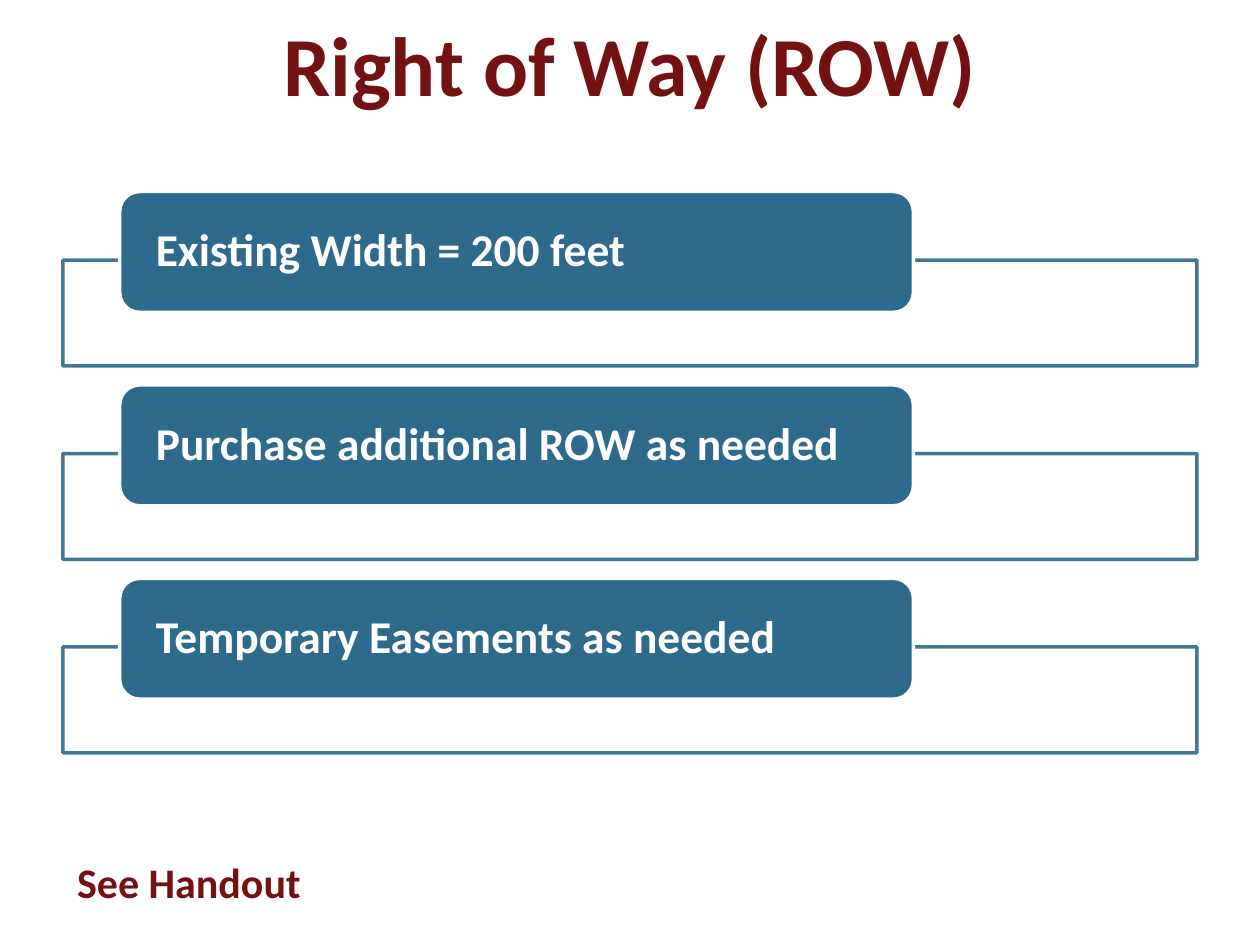
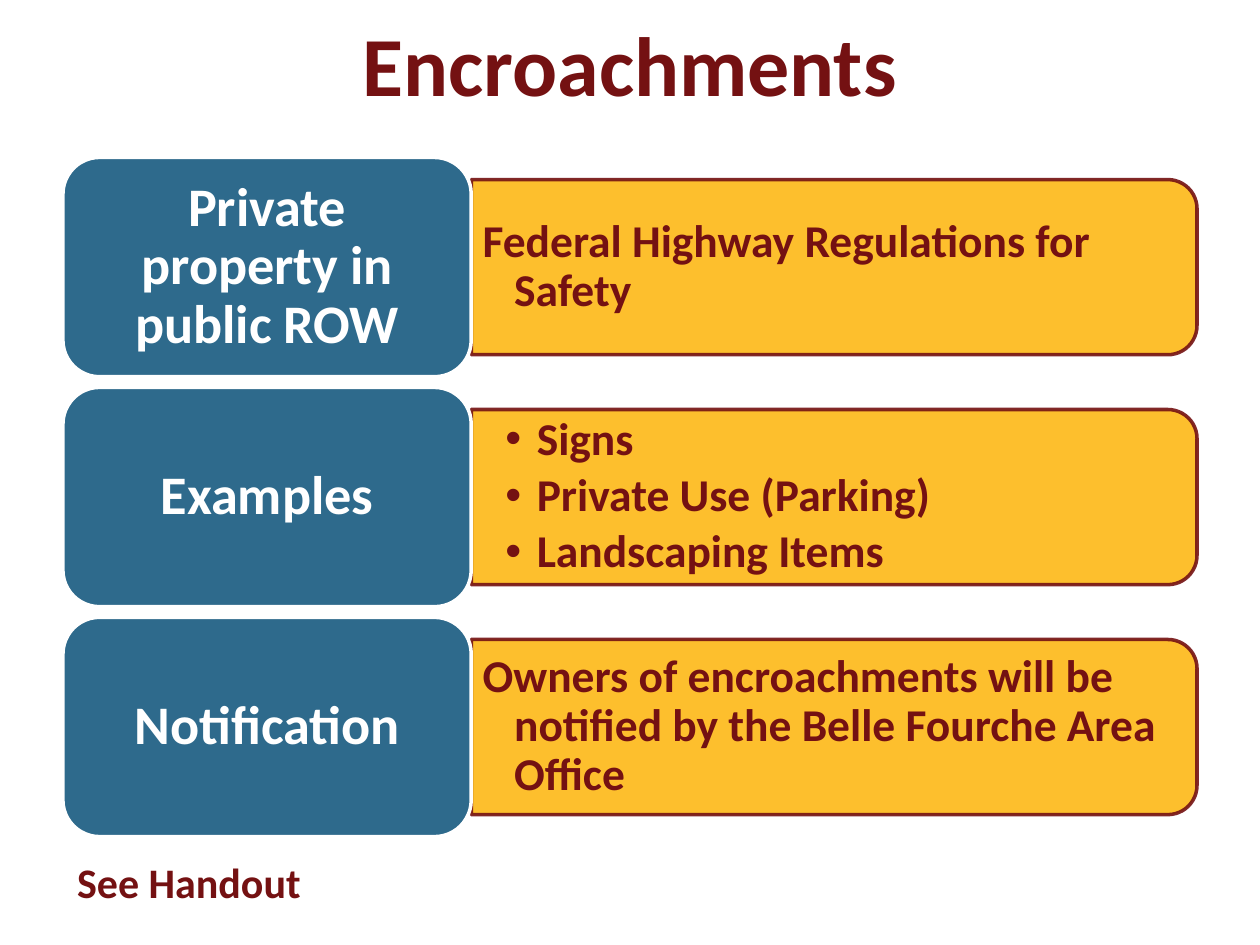
from lxml.etree import SubElement
from pptx import Presentation
from pptx.dml.color import RGBColor
from pptx.enum.shapes import MSO_SHAPE as Shape
from pptx.enum.text import MSO_ANCHOR as Anchor, PP_ALIGN as Align
from pptx.oxml.ns import qn
from pptx.util import Inches, Pt

COLORS = {"maroon": "741112", "blue": "2E6A8C", "gold": "FDB917", "white": "FFFFFF"}
COLUMNS, ROWS = 20, 15
BLANK_LAYOUT = 6

RIGHT_OF_WAY = [
    "Existing Width = 200 feet",
    "Purchase additional ROW as needed",
    "Temporary Easements as needed",
]
ENCROACHMENTS = [
    ("Private property in public ROW", ["Federal Highway Regulations for Safety"]),
    ("Examples", ["Signs", "Private Use (Parking)", "Landscaping Items"]),
    ("Notification",
     ["Owners of encroachments will be notified by the Belle Fourche Area Office"]),
]


class Deck:
    """Holds the shared style and the current slide; places things on a 20 by 15 grid."""

    def __init__(self):
        self.presentation = Presentation()
        self.presentation.slide_width = Inches(10)
        self.presentation.slide_height = Inches(7.5)
        self.column = self.presentation.slide_width / COLUMNS
        self.row = self.presentation.slide_height / ROWS
        self.slide = None

    def color(self, name):
        return RGBColor.from_string(COLORS[name])

    def place(self, left, top, width, height):
        return (round(left * self.column), round(top * self.row),
                round(width * self.column), round(height * self.row))

    def start(self, title):
        layout = self.presentation.slide_layouts[BLANK_LAYOUT]
        self.slide = self.presentation.slides.add_slide(layout)
        self.text_box(1, 0, 18, 2, [title], 48)
        self.text_box(1, 13.5, 4, 1, ["See Handout"], 24, inset=0.05)

    def fill_text(self, shape, lines, size, color, align, inset, spacing=1.0):
        frame = shape.text_frame
        frame.text = "\n".join(lines)
        frame.word_wrap = True
        frame.vertical_anchor = Anchor.MIDDLE
        frame.margin_left = frame.margin_right = Inches(inset)
        frame.margin_top = frame.margin_bottom = 0
        for paragraph in frame.paragraphs:
            paragraph.alignment = align
            paragraph.line_spacing = spacing
            for run in paragraph.runs:
                run.font.name = "Calibri"
                run.font.size = Pt(size)
                run.font.bold = True
                run.font.color.rgb = self.color(color)
        return frame

    def text_box(self, left, top, width, height, lines, size,
                 align=Align.CENTER, inset=0.1, spacing=1.0):
        box = self.slide.shapes.add_textbox(*self.place(left, top, width, height))
        return self.fill_text(box, lines, size, "maroon", align, inset, spacing)

    def panel(self, kind, left, top, width, height, fill, line):
        shape = self.slide.shapes.add_shape(kind, *self.place(left, top, width, height))
        shape.shadow.inherit = False
        shape.fill.solid()
        shape.fill.fore_color.rgb = self.color(fill)
        shape.line.color.rgb = self.color(line)
        shape.line.width = Pt(2)
        return shape

    def fade(self, shape):
        for color in shape._element.spPr.iter(qn("a:srgbClr")):
            SubElement(color, qn("a:alpha"), val="90000")

    def label(self, left, top, width, height, text, size, align, inset):
        shape = self.panel(Shape.ROUNDED_RECTANGLE, left, top, width, height,
                           "blue", "white")
        self.fill_text(shape, [text], size, "white", align, inset, 0.9)

    def framed_label(self, top, text):
        self.fade(self.panel(Shape.RECTANGLE, 1, top + 1.09, 18, 1.68, "white", "blue"))
        self.label(1.9, top, 12.6, 1.92, text, 26, Align.LEFT, 0.24)

    def tab(self, left, top, width, height):
        turned_left = left + (width - height) / 2
        turned_top = top - (width - height) / 2
        shape = self.panel(Shape.ROUND_2_SAME_RECTANGLE, turned_left, turned_top,
                           height, width, "gold", "maroon")
        shape.rotation = 90
        self.fade(shape)

    def detail(self, left, top, width, height, lines):
        bulleted = len(lines) > 1
        frame = self.text_box(left, top, width, height, lines, 26, Align.LEFT,
                              0.27 if bulleted else 0.09, 0.9)
        for paragraph in frame.paragraphs:
            properties = paragraph._p.get_or_add_pPr()
            properties.set("marL", str(Inches(0.25)))
            properties.set("indent", str(-Inches(0.25)))
            if bulleted:
                paragraph.space_after = Pt(4)
                SubElement(properties, qn("a:buFont"), typeface="Arial")
                SubElement(properties, qn("a:buChar"), char="•")

    def topic(self, top, heading, lines):
        self.tab(7.48, top + 0.35, 11.52, 2.78)
        self.detail(7.48, top + 0.49, 11.38, 2.5, lines)
        self.label(1, top, 6.48, 3.48, heading, 31, Align.CENTER, 0.13)


def main():
    deck = Deck()
    deck.start("Right of Way (ROW)")
    for index, text in enumerate(RIGHT_OF_WAY):
        deck.framed_label(3.04 + 3.07 * index, text)
    deck.start("Encroachments")
    for index, (heading, lines) in enumerate(ENCROACHMENTS):
        deck.topic(2.5 + 3.65 * index, heading, lines)
    deck.presentation.save("out.pptx")


if __name__ == "__main__":
    main()
